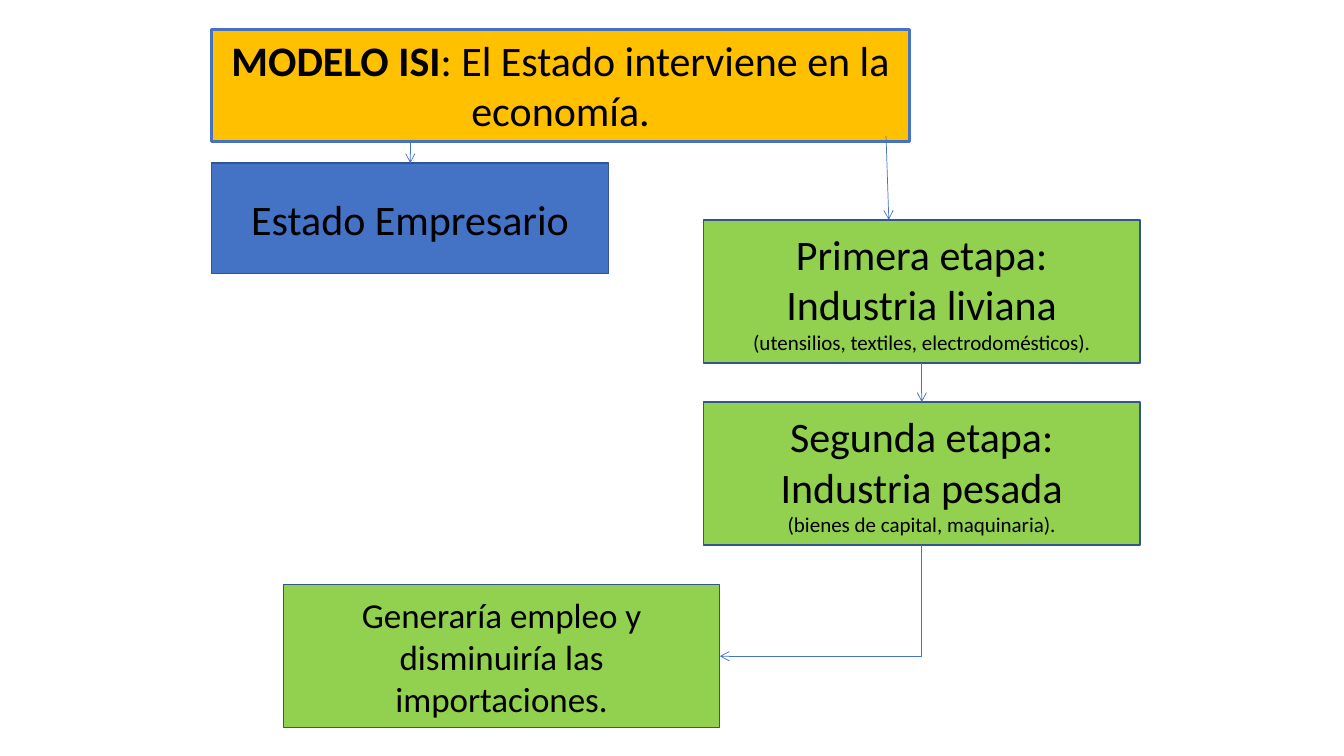
from lxml import etree
from pptx import Presentation
from pptx.dml.color import RGBColor
from pptx.enum.shapes import MSO_CONNECTOR, MSO_SHAPE
from pptx.enum.text import MSO_ANCHOR, MSO_AUTO_SIZE, PP_ALIGN
from pptx.oxml.ns import qn
from pptx.util import Cm, Pt

RECTANGLE = MSO_SHAPE.RECTANGLE
STRAIGHT, ELBOW = MSO_CONNECTOR.STRAIGHT, MSO_CONNECTOR.ELBOW
TOP, MIDDLE = MSO_ANCHOR.TOP, MSO_ANCHOR.MIDDLE
CENTER = PP_ALIGN.CENTER
FIT_SHAPE = MSO_AUTO_SIZE.SHAPE_TO_FIT_TEXT

COLORS = {
    "title": "FFC000",
    "state": "4472C4",
    "stage": "92D050",
    "accent": "4472C4",
    "outline": "325491",
    "text": "000000",
}
STAGE_LEFT, STAGE_WIDTH, STAGE_HEIGHT = 17.73, 11, 3.61
STAGE_CENTER = STAGE_LEFT + STAGE_WIDTH / 2
FIRST_TOP, SECOND_TOP = 5.54, 10.13
RESULT_LEFT, RESULT_TOP = 7.14, 14.73


def color(name):
    """Return the palette color with the given name."""
    return RGBColor.from_string(COLORS[name])


def apply_format(target, values):
    """Set each attribute of the target from a dict of values."""
    for name, value in values.items():
        setattr(target, name, value)


def add_box(slide, box, fill, paragraphs, outline="outline", width=1, anchor=MIDDLE):
    """Add a filled rectangle whose paragraphs are lists of (text, size, bold)."""
    shape = slide.shapes.add_shape(RECTANGLE, *map(Cm, box))
    shape.shadow.inherit = False
    shape.fill.solid()
    shape.fill.fore_color.rgb = color(fill)
    shape.line.color.rgb = color(outline)
    shape.line.width = Pt(width)
    frame = shape.text_frame
    apply_format(frame, {"word_wrap": True, "vertical_anchor": anchor})
    for index, runs in enumerate(paragraphs):
        paragraph = frame.add_paragraph() if index else frame.paragraphs[0]
        paragraph.alignment = CENTER
        for text, size, bold in runs:
            run = paragraph.add_run()
            run.text = text
            apply_format(run.font, {"name": "Calibri", "size": Pt(size), "bold": bold})
            run.font.color.rgb = color("text")
    return shape


def add_stage(slide, top, heading, industry, examples):
    """Add one green industrial stage with its examples in small type."""
    paragraphs = [[(heading, 30, False)], [(industry, 30, False)], [(examples, 15, False)]]
    add_box(slide, (STAGE_LEFT, top, STAGE_WIDTH, STAGE_HEIGHT), "stage", paragraphs)


def add_arrow(slide, start, end, kind=STRAIGHT):
    """Add a thin connector with an open arrowhead at its end."""
    connector = slide.shapes.add_connector(kind, *map(Cm, (*start, *end)))
    connector.line.color.rgb = color("accent")
    connector.line.width = Pt(0.5)
    line = connector.line._get_or_add_ln()
    etree.SubElement(line, qn("a:tailEnd"), type="arrow")
    etree.SubElement(connector._element.spPr, qn("a:effectLst"))
    return connector


def add_corner_arrow(slide, start, end):
    """Add an arrow that goes down and then left around one corner."""
    (start_x, start_y), (end_x, end_y) = start, end
    drop, reach = end_y - start_y, start_x - end_x
    left = (start_x + end_x - drop) / 2
    top = (start_y + end_y - reach) / 2
    connector = add_arrow(slide, (left, top), (left + drop, top + reach), ELBOW)
    properties = connector._element.spPr
    properties.find(qn("a:xfrm")).set("rot", "5400000")
    properties.find(qn("a:prstGeom")).set("prst", "bentConnector2")


def main():
    """Build the diagram of the ISI model and save it."""
    presentation = Presentation()
    apply_format(presentation, {"slide_width": Cm(33.87), "slide_height": Cm(19.05)})
    slide = presentation.slides.add_slide(presentation.slide_layouts[6])

    title = [("MODELO ISI", 30, True), (": El Estado interviene en la economía.", 30, False)]
    title_box = add_box(slide, (5.33, 0.74, 17.6, 2.82), "title", [title], "accent", 2.25, TOP)
    title_box.text_frame.auto_size = FIT_SHAPE
    add_box(slide, (5.33, 4.11, 10.01, 2.79), "state", [[("Estado Empresario", 30, False)]])
    add_stage(slide, FIRST_TOP, "Primera etapa:", "Industria liviana",
              "(utensilios, textiles, electrodomésticos).")
    add_stage(slide, SECOND_TOP, "Segunda etapa:", "Industria pesada",
              "(bienes de capital, maquinaria).")
    result = "Generaría empleo y disminuiría las importaciones."
    add_box(slide, (RESULT_LEFT, RESULT_TOP, STAGE_WIDTH, STAGE_HEIGHT), "stage",
            [[(result, 25, False)]])

    add_arrow(slide, (22.33, 3.43), (22.4, FIRST_TOP))
    add_arrow(slide, (10.34, 3.54), (10.34, 4.11))
    add_arrow(slide, (STAGE_CENTER, FIRST_TOP + STAGE_HEIGHT), (STAGE_CENTER, SECOND_TOP))
    add_corner_arrow(slide, (STAGE_CENTER, SECOND_TOP + STAGE_HEIGHT),
                     (RESULT_LEFT + STAGE_WIDTH, RESULT_TOP + STAGE_HEIGHT / 2))
    presentation.save("out.pptx")


if __name__ == "__main__":
    main()
